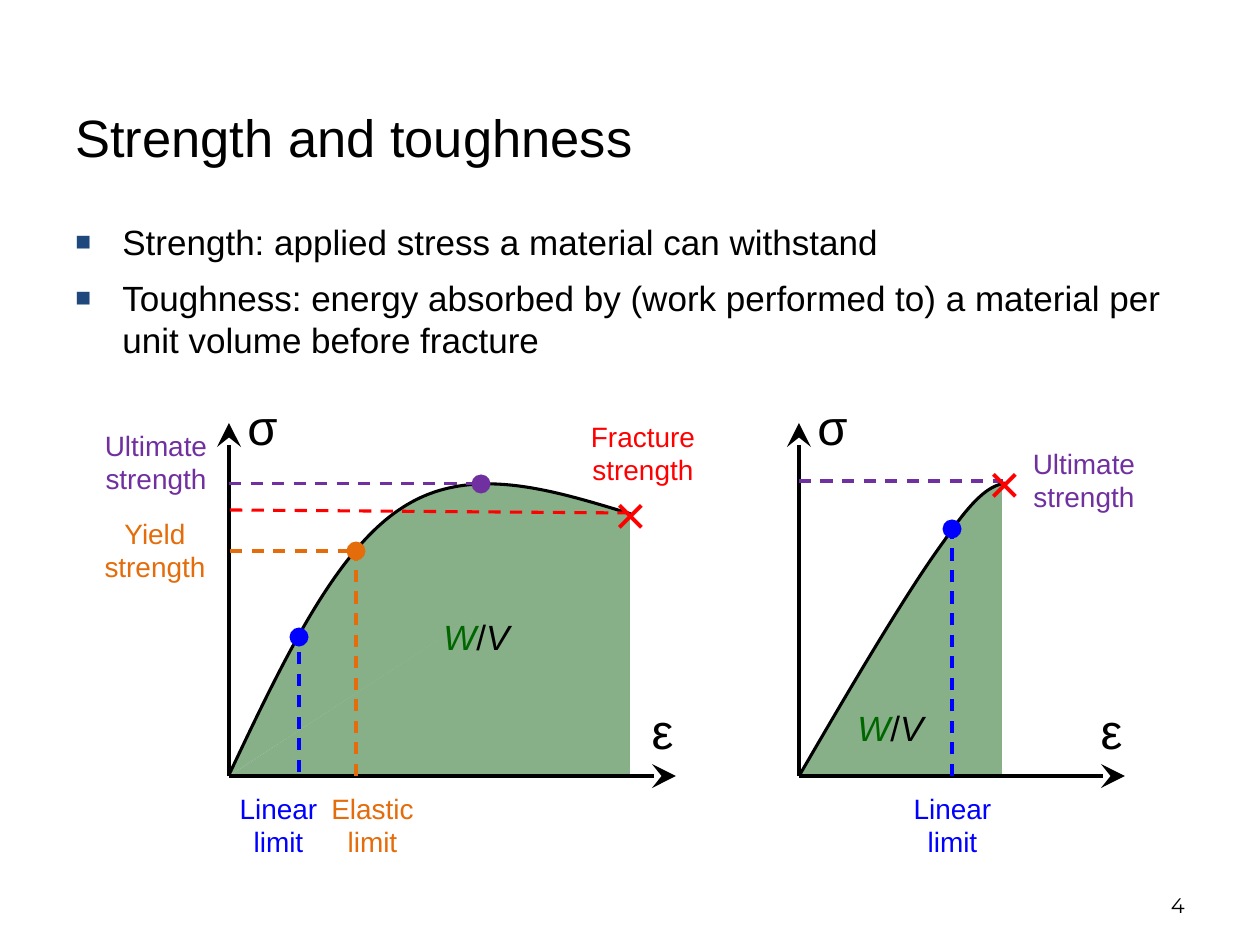
from lxml import etree
from pptx import Presentation
from pptx.dml.color import RGBColor
from pptx.enum.dml import MSO_LINE
from pptx.enum.shapes import MSO_CONNECTOR, MSO_SHAPE
from pptx.enum.text import MSO_ANCHOR, PP_ALIGN
from pptx.oxml.ns import qn
from pptx.util import Pt

EMU_PER_PX = 914400 / 126
BLANK_LAYOUT = 6

STRAIGHT = MSO_CONNECTOR.STRAIGHT
ELLIPSE, TRIANGLE = MSO_SHAPE.OVAL, MSO_SHAPE.RIGHT_TRIANGLE
DASH = MSO_LINE.DASH
TOP, MIDDLE, BOTTOM = MSO_ANCHOR.TOP, MSO_ANCHOR.MIDDLE, MSO_ANCHOR.BOTTOM
LEFT, CENTER, RIGHT = PP_ALIGN.LEFT, PP_ALIGN.CENTER, PP_ALIGN.RIGHT

BLACK = RGBColor(0x00, 0x00, 0x00)
RED = RGBColor(0xFF, 0x00, 0x00)
BLUE = RGBColor(0x00, 0x00, 0xFF)
ORANGE = RGBColor(0xE4, 0x6C, 0x0A)
PURPLE = RGBColor(0x70, 0x30, 0xA0)
GREEN = RGBColor(0x00, 0x66, 0x00)
AREA_GREEN = RGBColor(0x87, 0xAF, 0x88)
BULLET_NAVY = RGBColor(0x1F, 0x49, 0x7D)

DOT_SIZE = 19
LABEL_HEIGHT = 81


def px(length):
    return round(length * EMU_PER_PX)


def add_text(page, text, box, size=16, color=BLACK, font="Arial", align=CENTER,
             anchor=TOP, wrap=True):
    """Place text; a list of (text, color, italic) gives one paragraph of spans."""
    shape = page.shapes.add_textbox(*map(px, box))
    frame = shape.text_frame
    frame.word_wrap = wrap
    frame.vertical_anchor = anchor
    spans = [(text, color, False)] if isinstance(text, str) else text
    para = frame.paragraphs[0]
    para.alignment = align
    for words, span_color, italic in spans:
        span = para.add_run()
        span.text = words
        span.font.name = font
        span.font.size = Pt(size)
        span.font.italic = italic
        span.font.color.rgb = span_color
    return shape


def add_line(page, start, end, color, width, dashed=False, arrow=False):
    line = page.shapes.add_connector(STRAIGHT, *map(px, (*start, *end)))
    line.line.color.rgb = color
    line.line.width = Pt(width)
    if dashed:
        line.line.dash_style = DASH
    if arrow:
        etree.SubElement(line.line._get_or_add_ln(), qn("a:tailEnd"),
                         type="stealth", w="lg", len="lg")
    etree.SubElement(line._element.spPr, qn("a:effectLst"))


def add_filled(page, preset, box, color):
    shape = page.shapes.add_shape(preset, *map(px, box))
    shape.shadow.inherit = False
    shape.fill.solid()
    shape.fill.fore_color.rgb = color
    shape.line.fill.background()
    return shape


def add_curve(page, knots, peak, filled):
    """Draw chained cubic segments that rise from the first knot up to peak."""
    points = [(px(x), px(y)) for x, y in knots]
    left, top = points[0][0], px(peak)
    builder = page.shapes.build_freeform(*points[0])
    builder.add_line_segments([(points[-1][0], top)], close=False)
    curve = builder.convert_to_shape()

    # Swap the straight segment for the cubic ones
    outline = next(curve._element.iter(qn("a:path")))
    outline.remove(outline.find(qn("a:lnTo")))
    for first in range(1, len(points), 3):
        segment = etree.SubElement(outline, qn("a:cubicBezTo"))
        for x, y in points[first:first + 3]:
            etree.SubElement(segment, qn("a:pt"), x=str(x - left), y=str(y - top))

    curve.shadow.inherit = False
    if filled:
        curve.fill.solid()
        curve.fill.fore_color.rgb = AREA_GREEN
        curve.line.fill.background()
    else:
        curve.fill.background()
        curve.line.color.rgb = BLACK
        curve.line.width = Pt(1.75)


def add_bullets(page, items, box):
    shape = add_text(page, items[0], box, size=20, align=LEFT)
    frame = shape.text_frame
    for item in items[1:]:
        para = frame.add_paragraph()
        para.space_before = Pt(8)
        para.text = item
    for para in frame.paragraphs:
        properties = para._p.get_or_add_pPr()
        properties.set("marL", str(px(47)))
        properties.set("indent", str(px(-47)))
        color = etree.SubElement(properties, qn("a:buClr"))
        etree.SubElement(color, qn("a:srgbClr"), val=str(BULLET_NAVY))
        etree.SubElement(properties, qn("a:buSzPct"), val="75000")
        etree.SubElement(properties, qn("a:buFont"), typeface="Arial")
        etree.SubElement(properties, qn("a:buChar"), char="■")
        para.font.name = "Arial"
        para.font.size = Pt(20)
        para.font.color.rgb = BLACK


def add_stress_strain_plot(page, box, knots, peak, area, dots, guides, labels, work):
    """Draw one stress-strain diagram; every position is relative to the box."""
    left, top, width, height = box

    def at(x, y, *size):
        return (left + x, top + y, *size)

    # Area under the curve, overlapping the triangle by one px
    add_curve(page, [at(x, y + 1) for x, y in knots], top + peak + 1, filled=True)
    triangle = add_filled(page, TRIANGLE, at(*area), AREA_GREEN)
    triangle._element.spPr.xfrm.set("flipH", "1")

    # Axes, their symbols and the curve
    origin = at(0, height)
    for end in (at(width, height), at(0, 0)):
        add_line(page, origin, end, BLACK, 2.75, arrow=True)
    add_text(page, "σ", at(6, -33, 55, 72), size=28, wrap=False)
    add_text(page, "ε", at(width - 37, height - 82, 47, 62), size=28, wrap=False)
    add_curve(page, [at(*knot) for knot in knots], top + peak, filled=False)

    # Guides, key points and fracture mark
    for start, end, color in guides:
        add_line(page, at(*start), at(*end), color, 1.75, dashed=True)
    for x, y, color in dots:
        corner = at(x - DOT_SIZE / 2, y - DOT_SIZE / 2)
        add_filled(page, ELLIPSE, (*corner, DOT_SIZE, DOT_SIZE), color)
    end_x, end_y = knots[-1]
    add_text(page, "×", at(end_x - 29, end_y - 41, 58, 81), size=32, color=RED,
             align=LEFT, wrap=False)

    # Labels and work per volume
    for text, x, y, label_width, color in labels:
        add_text(page, text, at(x, y, label_width, LABEL_HEIGHT), color=color)
    add_text(page, [("W", GREEN, True), ("/", BLACK, False), ("V", BLACK, True)],
             at(*work, 92, 55), size=20, align=LEFT, wrap=False)


def build_page(page):
    # Heading and definitions
    add_text(page, "Strength and toughness", (63, 63, 1113, 147), size=30,
             align=LEFT, anchor=MIDDLE)
    add_bullets(page, [
        "Strength: applied stress a material can withstand",
        "Toughness: energy absorbed by (work performed to) a material per "
        "unit volume before fracture",
    ], (63, 214, 1113, 174))

    # Ductile material
    add_stress_strain_plot(
        page, (229, 423, 447, 353),
        knots=[(0, 352), (53, 240), (106, 128), (173, 85), (240, 41), (320, 66), (402, 91)],
        peak=61,
        area=(0, 92, 401, 261),
        dots=[(70, 214, BLUE), (127, 128, ORANGE), (252, 61, PURPLE)],
        guides=[((0, 61), (243, 61), PURPLE), ((127, 353), (127, 119), ORANGE),
                ((1, 128), (136, 128), ORANGE), ((70, 349), (70, 204), BLUE),
                ((1, 87), (400, 90), RED)],
        labels=[("Linear limit", -8, 362, 115, BLUE), ("Elastic limit", 81, 362, 125, ORANGE),
                ("Ultimate strength", -155, -1, 164, PURPLE),
                ("Yield strength", -142, 87, 136, ORANGE),
                ("Fracture strength", 332, -10, 164, RED)],
        work=(202, 186))

    # Brittle material
    add_stress_strain_plot(
        page, (799, 423, 326, 353),
        knots=[(0, 353), (54, 260), (109, 167), (145, 118), (179, 68), (193, 63), (206, 60)],
        peak=60,
        area=(0, 60, 203, 292),
        dots=[(153, 106, BLUE)],
        guides=[((0, 58), (204, 58), PURPLE), ((153, 353), (153, 100), BLUE)],
        labels=[("Linear limit", 96, 362, 115, BLUE),
                ("Ultimate strength", 203, 17, 164, PURPLE)],
        work=(46, 277))

    # Page number
    add_text(page, "4", (903, 861, 294, 63), size=12, font="Montserrat",
             align=RIGHT, anchor=BOTTOM)


def main():
    deck = Presentation()
    deck.slide_width, deck.slide_height = px(1260), px(945)
    build_page(deck.slides.add_slide(deck.slide_layouts[BLANK_LAYOUT]))
    deck.save("out.pptx")


if __name__ == "__main__":
    main()
